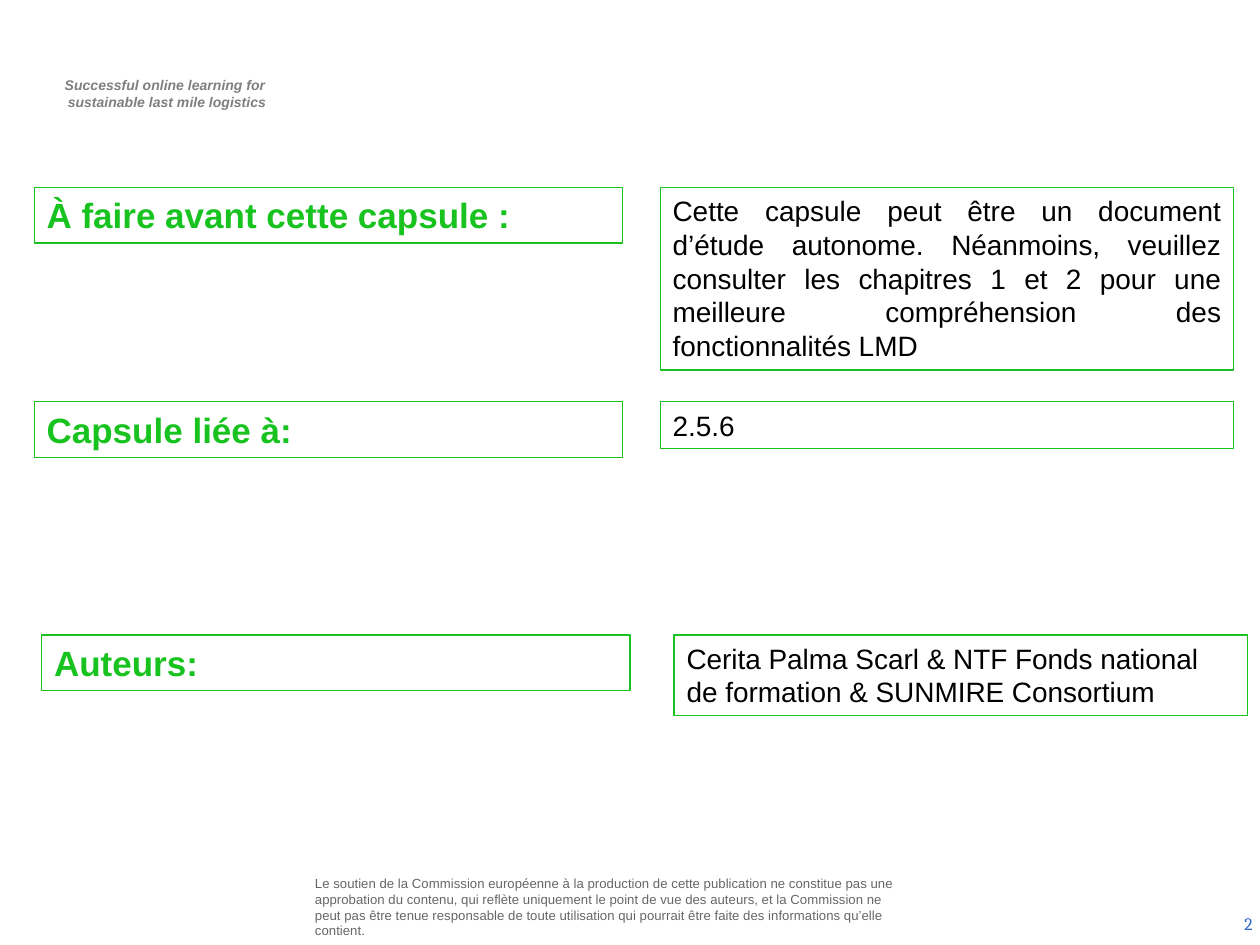
from pptx import Presentation
from pptx.dml.color import RGBColor as Rgb
from pptx.enum.shapes import MSO_SHAPE as Kind
from pptx.enum.text import MSO_ANCHOR as Anchor, MSO_AUTO_SIZE as Auto, PP_ALIGN as Align
from pptx.util import Cm, Pt


def hue(code):
    return Rgb.from_string(code)


class Deck:
    """Holds the style and the current slide."""

    font, green, black, white = "Arial", "18C320", "000000", "FFFFFF"

    def __init__(self):
        self.show = Presentation()
        self.show.slide_width, self.show.slide_height = Cm(25.4), Cm(19.05)
        self.slide = self.show.slides.add_slide(self.show.slide_layouts[6])

    def letter(self, shape, lines, size, color, font=None, bold=False,
               slant=False, align=Align.LEFT, anchor=Anchor.TOP, pad=(0.25, 0.13), left=0):
        frame = shape.text_frame
        frame.word_wrap = True
        frame.auto_size = Auto.NONE
        frame.vertical_anchor = anchor
        frame.margin_left = frame.margin_right = Cm(pad[0])
        frame.margin_top = frame.margin_bottom = Cm(pad[1])
        for i, line in enumerate(lines):
            para = frame.add_paragraph() if i else frame.paragraphs[0]
            para.alignment = align
            if left:
                para._p.get_or_add_pPr().set("marL", str(Cm(left)))
            run = para.add_run()
            run.text = line
            run.font.name = font or self.font
            run.font.size = Pt(size)
            run.font.bold, run.font.italic = bold, slant
            run.font.color.rgb = hue(color)

    def text(self, area, lines, size, color, **style):
        box = self.slide.shapes.add_textbox(*map(Cm, area))
        self.letter(box, lines, size, color, **style)

    def frame(self, area, line, size, color, **style):
        box = self.slide.shapes.add_shape(Kind.RECTANGLE, *map(Cm, area))
        box.shadow.inherit = False
        box.fill.solid()
        box.fill.fore_color.rgb = hue(self.white)
        box.line.color.rgb = hue(self.green)
        box.line.width = Pt(0.75)
        self.letter(box, [line], size, color, **style)

    def label(self, x, y, line):
        self.frame((x, y, 11.86, 1.12), line, 20, self.green, bold=True)

    def body(self, x, y, high, line, align=Align.LEFT):
        self.frame((x, y, 11.56, high), line, 16, self.black, align=align)


def main():
    deck = Deck()
    deck.text((0.74, 1.42, 5.16, 0.94),
              ["Successful online learning for ", "sustainable last mile logistics"],
              8, "7F7F7F", bold=True, slant=True, align=Align.CENTER, left=0.1)
    deck.text((6.25, 17.65, 12.01, 1.27),
              ["Le soutien de la Commission européenne à la production de cette publication "
               "ne constitue pas une approbation du contenu, qui reflète uniquement le point "
               "de vue des auteurs, et la Commission ne peut pas être tenue responsable de "
               "toute utilisation qui pourrait être faite des informations qu’elle contient."],
              7.5, "666666", anchor=Anchor.MIDDLE, pad=(0.1, 0.1))
    deck.text((19.58, 18.11, 5.92, 1.02), ["2"], 10, "3366CC",
              font="Cambria", align=Align.RIGHT, anchor=Anchor.MIDDLE)

    rows = [
        (0.69, 13.31, 3.78, 3.68, "À faire avant cette capsule :",
         "Cette capsule peut être un document d’étude autonome. Néanmoins, veuillez "
         "consulter les chapitres 1 et 2 pour une meilleure compréhension des "
         "fonctionnalités LMD", Align.JUSTIFY),
        (0.69, 13.31, 8.1, 0.94, "Capsule liée à:", "2.5.6", Align.LEFT),
        (0.84, 13.59, 12.8, 1.63, "Auteurs:",
         "Cerita Palma Scarl & NTF Fonds national de formation & SUNMIRE Consortium",
         Align.LEFT),
    ]
    for left, right, y, high, title, line, align in rows:
        deck.label(left, y, title)
        deck.body(right, y, high, line, align)
    deck.show.save("out.pptx")


if __name__ == "__main__":
    main()
